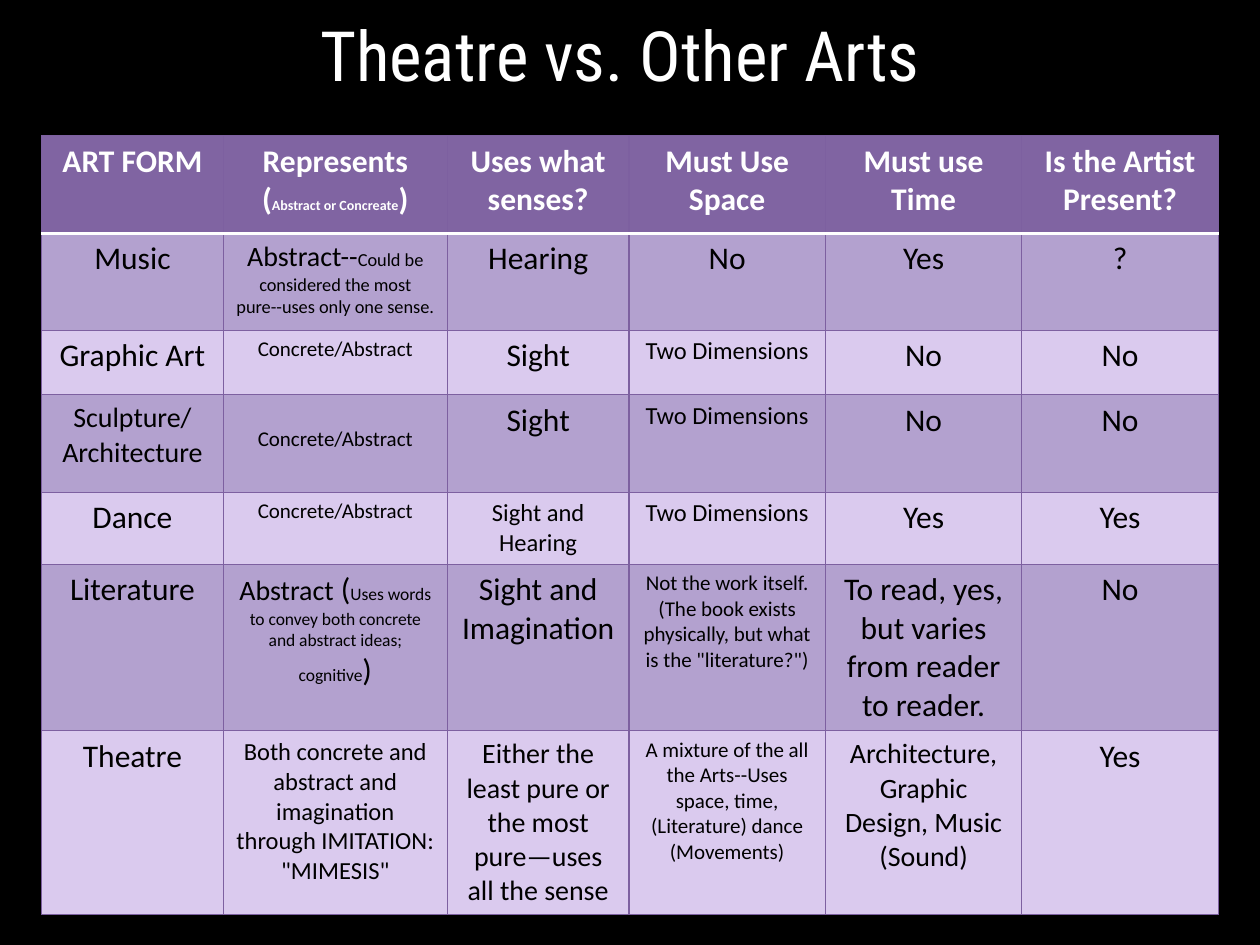
from lxml.etree import SubElement
from pptx import Presentation
from pptx.dml.color import RGBColor
from pptx.enum.text import MSO_ANCHOR, PP_ALIGN
from pptx.oxml.ns import qn
from pptx.util import Cm, Pt

PURPLE, BORDER, WHITE, BLACK = "8064A2", "7D60A0", "FFFFFF", "000000"
BANDS = ["DACAEE", "B3A1CF"]
COLS = [3.66, 4.52, 3.66, 3.96, 3.96, 3.96]
HEIGHTS = [1.96, 1.96, 1.3, 1.96, 1.45, 3.35, 3.7]
CONCRETE = [("Concrete/Abstract", 12)]
TWO_D = [("Two Dimensions", 14)]

# A plain string is 18 pt; a list holds (text, size) runs, "\n" opens a paragraph.
ROWS = [
    ["ART FORM",
     [("Represents", 18), ("\n", 18), ("(", 18), ("Abstract or Concreate", 8), (")", 18)],
     "Uses what senses?", "Must Use Space", "Must use Time", "Is the Artist Present?"],
    ["Music",
     [("Abstract--", 16),
      ("Could be considered the most pure--uses only one sense.", 10.5)],
     "Hearing", "No", "Yes", "?"],
    ["Graphic Art", CONCRETE, "Sight", TWO_D, "No", "No"],
    [[("Sculpture/ Architecture", 16)], CONCRETE, "Sight", TWO_D, "No", "No"],
    ["Dance", CONCRETE, [("Sight and Hearing", 14)], TWO_D, "Yes", "Yes"],
    ["Literature",
     [("Abstract", 16), (" (", 18),
      ("Uses words to convey both concrete and abstract ideas; cognitive", 10), (")", 18)],
     "Sight and Imagination",
     [('Not the work itself. (The book exists physically, but what is the "literature?")', 12)],
     "To read, yes, but varies from reader to reader.", "No"],
    ["Theatre",
     [('Both concrete and abstract and imagination through IMITATION: "MIMESIS"', 14)],
     [("Either the least pure or the most pure—uses all the sense", 16)],
     [("A mixture of the all the Arts--Uses space, time, (Literature) dance (Movements)", 12)],
     [("Architecture, Graphic Design, Music (Sound)", 16)], "Yes"],
]


def rgb(color):
    return RGBColor.from_string(color)


def add_run(p, text, color, **fmt):
    r = p.add_run()
    r.text = text
    r.font.color.rgb = rgb(color)
    for name, value in fmt.items():
        setattr(r.font, name, value)


prs = Presentation()
prs.slide_width, prs.slide_height = Cm(25.4), Cm(19.05)
s = prs.slides.add_slide(prs.slide_layouts[5])
s.background.fill.solid()
s.background.fill.fore_color.rgb = rgb(BLACK)

title = s.shapes.title
box = {"left": 1.07, "top": 0.2, "width": 22.86, "height": 1.78}
for name, value in box.items():
    setattr(title, name, Cm(value))
tf = title.text_frame
tf.vertical_anchor = MSO_ANCHOR.MIDDLE
p = tf.paragraphs[0]
p.alignment = PP_ALIGN.CENTER
add_run(p, "Theatre vs. Other Arts", WHITE, size=Pt(39.6), name="Roboto Condensed")

table = s.shapes.add_table(len(ROWS), len(COLS), Cm(0.84), Cm(2.74),
                           Cm(sum(COLS)), Cm(sum(HEIGHTS))).table
for col, width in zip(table.columns, COLS):
    col.width = Cm(width)
for row, height in zip(table.rows, HEIGHTS):
    row.height = Cm(height)

for i, row in enumerate(ROWS):
    header = i == 0
    for j, content in enumerate(row):
        cell = table.cell(i, j)

        # Borders come before the fill in the cell properties
        tcPr = cell._tc.get_or_add_tcPr()
        for side in "LRTB":
            under_header = (i, side) in [(0, "B"), (1, "T")]
            color, width = (WHITE, 2) if under_header else (BORDER, 0.75)
            ln = SubElement(tcPr, qn(f"a:ln{side}"), w=str(Pt(width)))
            SubElement(SubElement(ln, qn("a:solidFill")), qn("a:srgbClr"), val=color)
        cell.fill.solid()
        cell.fill.fore_color.rgb = rgb(PURPLE if header else BANDS[i % 2])

        p = cell.text_frame.paragraphs[0]
        p.alignment = PP_ALIGN.CENTER
        for text, size in [(content, 18)] if isinstance(content, str) else content:
            if text == "\n":
                p = cell.text_frame.add_paragraph()
                p.alignment = PP_ALIGN.CENTER
                continue
            add_run(p, text, WHITE if header else BLACK,
                    size=Pt(size), name="Calibri", bold=header)

# The sculpture row's second cell sits one line lower
table.cell(3, 1).margin_top = Cm(0.64)

prs.save("out.pptx")
